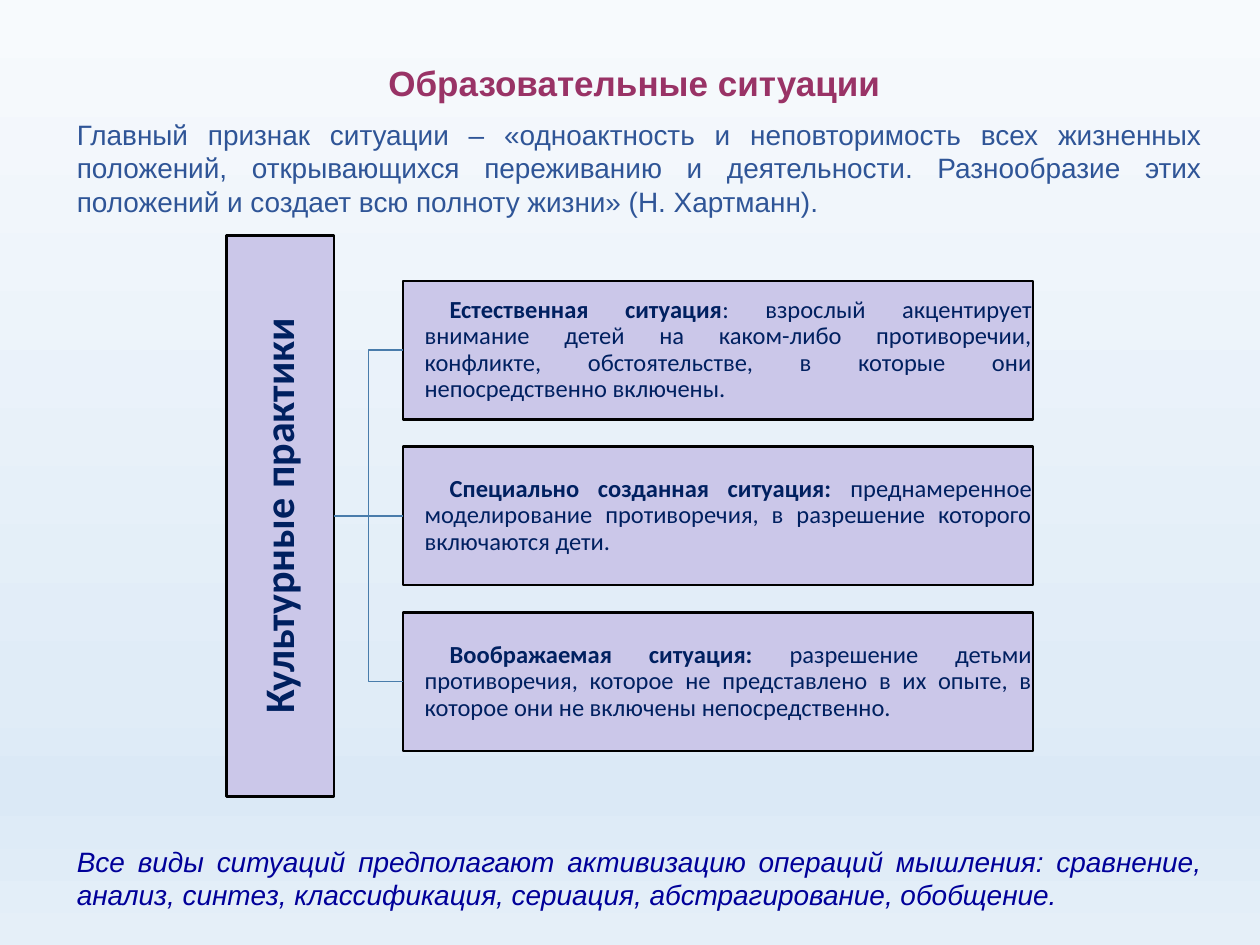
from dataclasses import dataclass

from lxml.etree import SubElement
from pptx import Presentation
from pptx.dml.color import RGBColor
from pptx.enum.shapes import MSO_CONNECTOR, MSO_SHAPE
from pptx.enum.text import MSO_ANCHOR, MSO_AUTO_SIZE, PP_ALIGN
from pptx.oxml.ns import qn
from pptx.util import Inches, Pt

BOX_FILL, BOX_LINE, BOX_TEXT, LINK = "CBC7E9", "000000", "002060", "497CAB"
BACKGROUND_STOPS = [(0, "F7FAFD"), (74, "E0ECF7"), (83, "DBE9F6"), (100, "E5EFF8")]


@dataclass
class Situation:
    name: str
    description: str


SITUATIONS = [
    Situation("Естественная ситуация",
              ": взрослый акцентирует внимание детей на каком-либо противоречии, "
              "конфликте, обстоятельстве, в которые они непосредственно включены."),
    Situation("Специально созданная ситуация: ",
              "преднамеренное моделирование противоречия, в разрешение которого "
              "включаются дети."),
    Situation("Воображаемая ситуация:",
              " разрешение детьми противоречия, которое не представлено в их опыте, "
              "в которое они не включены непосредственно."),
]


def color(value: str) -> RGBColor:
    return RGBColor.from_string(value)


def set_font(paragraph, name: str, size: float, value: str, bold=None, italic=None) -> None:
    font = paragraph.font
    font.name, font.size, font.bold, font.italic = name, Pt(size), bold, italic
    font.color.rgb = color(value)


def place(shape, left: float, top: float, width: float, height: float) -> None:
    shape.left, shape.top = Inches(left), Inches(top)
    shape.width, shape.height = Inches(width), Inches(height)
    frame = shape.text_frame
    frame.auto_size = MSO_AUTO_SIZE.NONE
    frame.vertical_anchor = MSO_ANCHOR.TOP


def paint_background(slide) -> None:
    fill = slide.background.fill
    fill.gradient()
    fill.gradient_angle = 270
    stops = slide.background._cSld.find(".//" + qn("a:gsLst"))
    for old_stop in list(stops):
        stops.remove(old_stop)
    for percent, value in BACKGROUND_STOPS:
        stop = SubElement(stops, qn("a:gs"), pos=str(percent * 1000))
        SubElement(stop, qn("a:srgbClr"), val=value)


def add_box(slide, left: float, top: float, width: float, height: float, inset: float):
    box = slide.shapes.add_shape(MSO_SHAPE.RECTANGLE, Inches(left), Inches(top),
                                 Inches(width), Inches(height))
    box.shadow.inherit = False
    box.fill.solid()
    box.fill.fore_color.rgb = color(BOX_FILL)
    box.line.color.rgb = color(BOX_LINE)
    box.line.width = Pt(1.5)
    frame = box.text_frame
    frame.word_wrap = True
    frame.vertical_anchor = MSO_ANCHOR.MIDDLE
    frame.margin_left = frame.margin_right = Inches(inset)
    frame.margin_top = frame.margin_bottom = Inches(inset)
    frame.paragraphs[0].line_spacing = 0.9
    return box


def add_situation(slide, situation: Situation, top: float):
    box = add_box(slide, 3.2, top, 5, 1.1, 0.01)
    paragraph = box.text_frame.paragraphs[0]
    paragraph.alignment = PP_ALIGN.JUSTIFY
    set_font(paragraph, "Calibri", 14, BOX_TEXT)
    properties = paragraph._p.get_or_add_pPr()
    properties.set("marL", str(Inches(0.16)))
    properties.set("indent", str(Inches(0.2)))
    name = paragraph.add_run()
    name.text = situation.name
    name.font.bold = True
    paragraph.add_run().text = situation.description
    return box


def link(slide, source, target, kind) -> None:
    connector = slide.shapes.add_connector(kind, 0, 0, 0, 0)
    connector.begin_connect(source, 3)
    connector.end_connect(target, 1)
    connector.line.color.rgb = color(LINK)
    connector.line.width = Pt(1)
    SubElement(connector._element.spPr, qn("a:effectLst"))


def main() -> None:
    presentation = Presentation()
    presentation.slide_width, presentation.slide_height = Inches(10), Inches(7.5)
    slide = presentation.slides.add_slide(presentation.slide_layouts[1])
    paint_background(slide)

    # Heading
    heading = slide.shapes.title
    heading.text = "Образовательные ситуации"
    place(heading, 1.02, 0.44, 8.03, 0.44)
    set_font(heading.text_frame.paragraphs[0], "Arial", 20, "993366", bold=True)

    # Definition above the diagram, conclusion below it
    body = slide.placeholders[1]
    place(body, 0.51, 0.88, 9.13, 6.47)
    definition = body.text_frame.paragraphs[0]
    definition.text = (
        "Главный признак ситуации – «одноактность и неповторимость всех жизненных "
        "положений, открывающихся переживанию и деятельности. Разнообразие этих "
        "положений и создает всю полноту жизни» (Н. Хартманн).")
    set_font(definition, "Arial", 16, "2F5597")
    conclusion = body.text_frame.add_paragraph()
    conclusion.text = (
        "Все виды ситуаций предполагают активизацию операций мышления: сравнение, "
        "анализ, синтез, классификация, сериация, абстрагирование, обобщение.")
    set_font(conclusion, "Arial", 16, "000099", italic=True)
    for paragraph, gap in ((definition, 0), (conclusion, 358)):
        paragraph.alignment = PP_ALIGN.JUSTIFY
        paragraph.space_before = Pt(gap)
        properties = paragraph._p.get_or_add_pPr()
        properties.set("marL", "0")
        properties.set("indent", "0")
        bullet_none = properties.makeelement(qn("a:buNone"))
        properties.find(qn("a:spcBef")).addnext(bullet_none)

    # Root of the diagram, read from bottom to top
    practices = add_box(slide, 1.8, 1.87, 0.85, 4.45, 0.02)
    practices.text_frame._txBody.bodyPr.set("vert", "vert270")
    label = practices.text_frame.paragraphs[0]
    label.text = "Культурные практики"
    label.alignment = PP_ALIGN.CENTER
    set_font(label, "Calibri", 24, BOX_TEXT, bold=True)

    # Three kinds of situation and their links
    for index, situation in enumerate(SITUATIONS):
        box = add_situation(slide, situation, 2.23 + 1.315 * index)
        middle = index == len(SITUATIONS) // 2
        link(slide, practices, box, MSO_CONNECTOR.STRAIGHT if middle else MSO_CONNECTOR.ELBOW)

    presentation.save("out.pptx")


if __name__ == "__main__":
    main()
